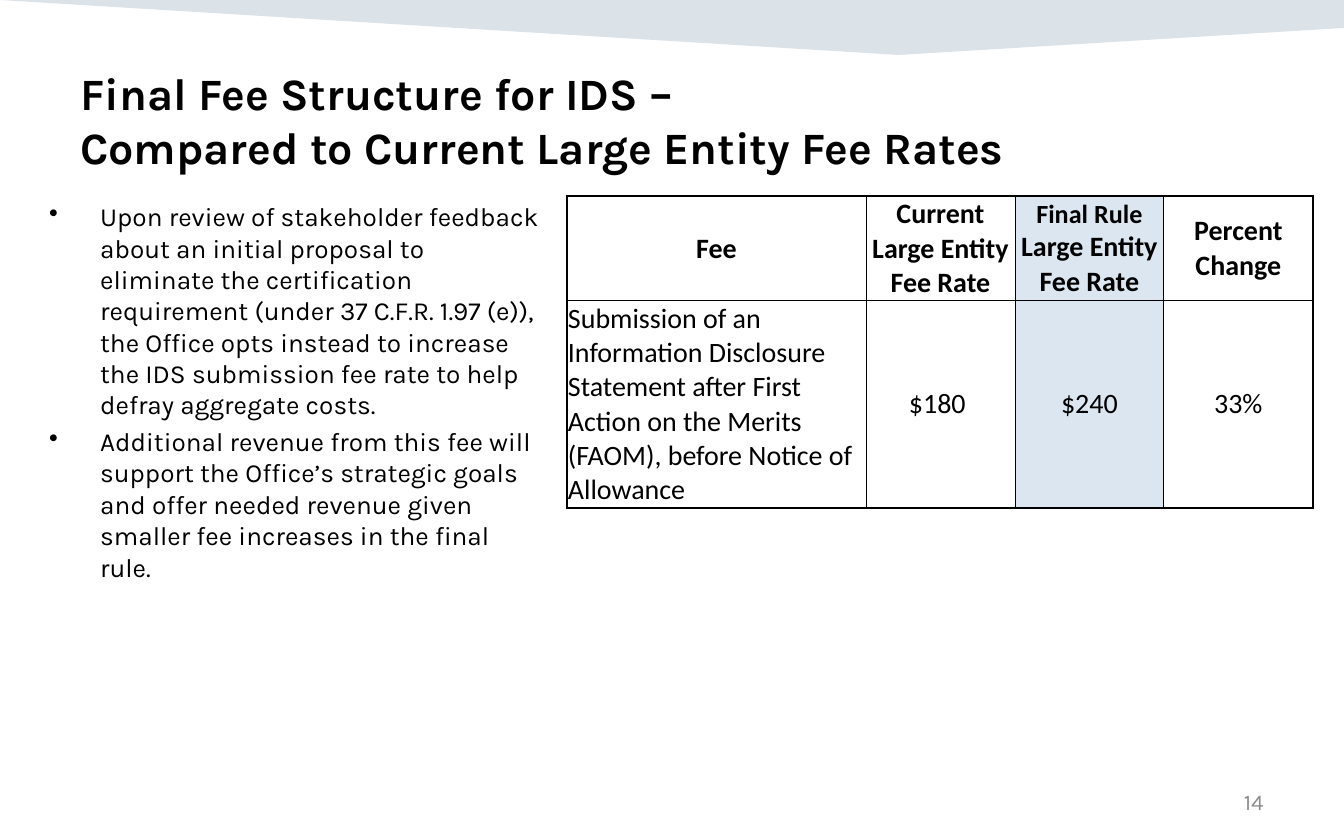
from dataclasses import dataclass
from lxml.etree import SubElement
from pptx import Presentation
from pptx.dml.color import RGBColor
from pptx.enum.text import MSO_ANCHOR as Anchor, PP_ALIGN as Align
from pptx.oxml import parse_xml
from pptx.oxml.ns import nsdecls, qn
from pptx.util import Emu, Pt

EMU_PER_PX = 914400 / 134.4
BLACK = RGBColor(0x00, 0x00, 0x00)
WHITE = RGBColor(0xFF, 0xFF, 0xFF)
GREY = RGBColor(0x8C, 0x8C, 0x8C)
NAVY = RGBColor(0x16, 0x44, 0x69)
PALE_BLUE = RGBColor(0xDC, 0xE6, 0xF1)
HEADING_FONT = "Karla"
TABLE_FONT = "Calibri"
THIN, THICK = 0.5, 1.5


@dataclass(frozen=True)
class TextStyle:
    size: float
    color: RGBColor = BLACK
    bold: bool = False
    font: str = HEADING_FONT
    align: Align = Align.LEFT


@dataclass(frozen=True)
class Area:
    left: int
    top: int
    width: int
    height: int


@dataclass(frozen=True)
class Column:
    width: int
    heading: tuple[tuple[str, int], ...]
    value: str
    fill: RGBColor = WHITE
    value_align: Align = Align.CENTER


BAND = ((0, 0), (1344, 0), (1344, 28), (899, 55))
TITLE = ("Final Fee Structure for IDS – ", "Compared to Current Large Entity Fee Rates")
BULLETS = (
    "Upon review of stakeholder feedback about an initial proposal to eliminate "
    "the certification requirement (under 37 C.F.R. 1.97 (e)), the Office opts "
    "instead to increase the IDS submission fee rate to help defray aggregate costs.",
    "Additional revenue from this fee will support the Office’s strategic goals "
    "and offer needed revenue given smaller fee increases in the final rule.",
)
COLUMNS = (
    Column(299, (("Fee", 15),),
           "Submission of an Information Disclosure Statement after First Action "
           "on the Merits (FAOM), before Notice of Allowance",
           value_align=Align.LEFT),
    Column(149, (("Current Large Entity Fee Rate", 15),), "$180 "),
    Column(149, (("Final Rule ", 14), ("Large Entity Fee Rate", 15)), "$240", PALE_BLUE),
    Column(149, (("Percent Change", 15),), "33%"),
)
ROW_HEIGHTS = (104, 208)


def px(length: int) -> Emu:
    return Emu(round(length * EMU_PER_PX))


def style_paragraph(para, style: TextStyle) -> None:
    para.alignment = style.align
    para.font.name = style.font
    para.font.size = Pt(style.size)
    para.font.bold = style.bold
    para.font.color.rgb = style.color


def add_text_box(slide, area: Area, anchor: Anchor = Anchor.TOP):
    box = slide.shapes.add_textbox(px(area.left), px(area.top), px(area.width), px(area.height))
    frame = box.text_frame
    frame.word_wrap = True
    frame.vertical_anchor = anchor
    return frame


def add_band(slide) -> None:
    builder = slide.shapes.build_freeform(*BAND[0], scale=EMU_PER_PX)
    builder.add_line_segments(BAND[1:], close=True)
    band = builder.convert_to_shape()
    band.shadow.inherit = False
    band.line.fill.background()
    band.fill.solid()
    band.fill.fore_color.rgb = NAVY
    color = band.fill._xPr.find(qn("a:solidFill"))[0]
    SubElement(color, qn("a:alpha"), val="15000")


def add_title(slide) -> None:
    frame = add_text_box(slide, Area(67, 55, 1210, 119))
    frame.margin_top = px(11)
    para = frame.paragraphs[0]
    style_paragraph(para, TextStyle(24, bold=True))
    for index, line in enumerate(TITLE):
        if index:
            para.add_line_break()
        para.add_run().text = line


def add_bullets(slide) -> None:
    frame = add_text_box(slide, Area(36, 194, 519, 629))
    for index, text in enumerate(BULLETS):
        para = frame.add_paragraph() if index else frame.paragraphs[0]
        para.text = text
        style_paragraph(para, TextStyle(14))
        para.space_before = Pt(2.8)
        properties = para._p.get_or_add_pPr()
        properties.set("marL", str(px(51)))
        properties.set("indent", str(px(-51)))
        bullet = parse_xml(f'<a:buChar {nsdecls("a")} char="•"/>')
        properties.find(qn("a:defRPr")).addprevious(bullet)


def set_borders(cell, widths: dict[str, float]) -> None:
    properties = cell._tc.get_or_add_tcPr()
    for index, (side, width) in enumerate(widths.items()):
        border = parse_xml(
            f'<a:ln{side} {nsdecls("a")} w="{Pt(width)}"><a:solidFill>'
            f'<a:srgbClr val="{BLACK}"/></a:solidFill></a:ln{side}>'
        )
        properties.insert(index, border)


def fill_cell(cell, runs: tuple[tuple[str, int], ...], style: TextStyle, fill: RGBColor) -> None:
    cell.vertical_anchor = Anchor.MIDDLE
    cell.margin_left = cell.margin_right = cell.margin_top = px(1)
    cell.margin_bottom = 0
    cell.fill.solid()
    cell.fill.fore_color.rgb = fill
    para = cell.text_frame.paragraphs[0]
    style_paragraph(para, style)
    for text, size in runs:
        span = para.add_run()
        span.text = text
        span.font.size = Pt(size)


def add_fee_table(slide) -> None:
    width = sum(column.width for column in COLUMNS)
    table = slide.shapes.add_table(
        len(ROW_HEIGHTS), len(COLUMNS), px(567), px(196), px(width), px(sum(ROW_HEIGHTS))
    ).table
    table.first_row = table.horz_banding = False
    for row, height in zip(table.rows, ROW_HEIGHTS):
        row.height = px(height)
    last = len(COLUMNS) - 1
    for index, column in enumerate(COLUMNS):
        table.columns[index].width = px(column.width)
        heading, value = table.cell(0, index), table.cell(1, index)
        fill_cell(heading, column.heading,
                  TextStyle(15, bold=True, font=TABLE_FONT, align=Align.CENTER), column.fill)
        fill_cell(value, ((column.value, 15),),
                  TextStyle(15, font=TABLE_FONT, align=column.value_align), column.fill)
        sides = {"L": THIN if index else THICK, "R": THICK if index == last else THIN}
        set_borders(heading, sides | {"T": THICK, "B": THIN})
        set_borders(value, sides | {"T": THIN, "B": THICK})


def add_page_number(slide) -> None:
    para = add_text_box(slide, Area(964, 780, 313, 44), Anchor.MIDDLE).paragraphs[0]
    para.text = "14"
    style_paragraph(para, TextStyle(12, GREY, align=Align.RIGHT))


def main() -> None:
    deck = Presentation()
    deck.slide_width, deck.slide_height = px(1344), px(840)
    slide = deck.slides.add_slide(deck.slide_layouts[6])
    add_band(slide)
    add_title(slide)
    add_page_number(slide)
    add_bullets(slide)
    add_fee_table(slide)
    deck.save("out.pptx")


if __name__ == "__main__":
    main()
